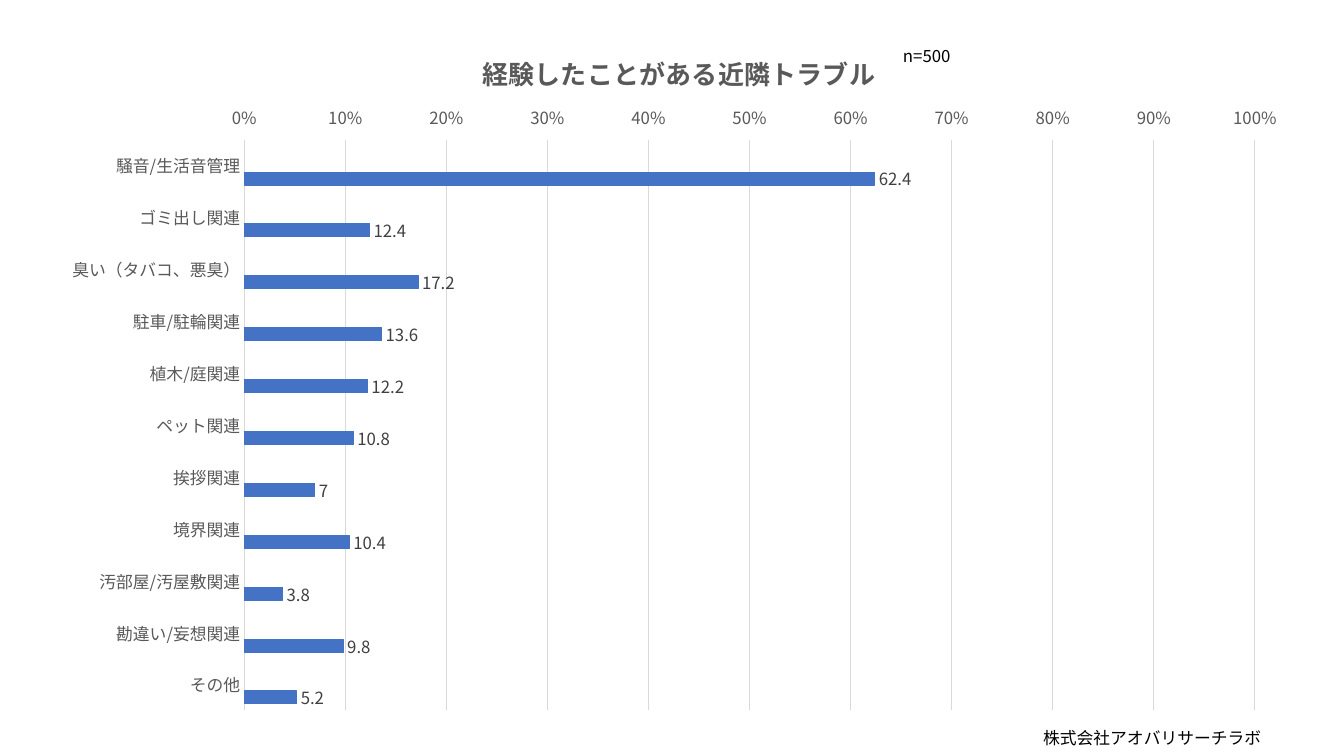
import pptx
import pptx.chart.data
import pptx.dml.color
import pptx.enum.chart
import pptx.enum.text
import pptx.oxml
import pptx.oxml.ns
import pptx.util

Pt = pptx.util.Pt
qn = pptx.oxml.ns.qn

TROUBLES = [
    ("その他", 5.2),
    ("勘違い/妄想関連", 9.8),
    ("汚部屋/汚屋敷関連", 3.8),
    ("境界関連", 10.4),
    ("挨拶関連", 7),
    ("ペット関連", 10.8),
    ("植木/庭関連", 12.2),
    ("駐車/駐輪関連", 13.6),
    ("臭い（タバコ、悪臭）", 17.2),
    ("ゴミ出し関連", 12.4),
    ("騒音/生活音管理", 62.4),
]


def rgb(value):
    return pptx.dml.color.RGBColor.from_string(value)


def manual_layout(**values):
    ns = pptx.oxml.ns.nsdecls("c")
    parts = "".join(f'<c:{k} val="{v}"/>' for k, v in values.items())
    return pptx.oxml.parse_xml(
        f"<c:layout {ns}><c:manualLayout>{parts}</c:manualLayout></c:layout>")


def drop_layout(parent):
    for layout in parent.findall(qn("c:layout")):
        parent.remove(layout)


class Deck:
    face = "Noto Sans CJK JP"
    grey = "595959"
    grid = "D9D9D9"

    def __init__(self, width, height):
        self.prs = pptx.Presentation()
        self.prs.slide_width, self.prs.slide_height = Pt(width), Pt(height)
        self.slide = self.prs.slides.add_slide(self.prs.slide_layouts[6])

    def style(self, font, size, color, bold=False):
        font.name, font.size, font.bold = self.face, Pt(size), bold
        font.color.rgb = rgb(color)

    def east_asian(self, element):
        for latin in element.iter(qn("a:latin")):
            ea = pptx.oxml.parse_xml(
                f'<a:ea {pptx.oxml.ns.nsdecls("a")} typeface="{self.face}"/>')
            latin.addnext(ea)

    def text(self, x, y, w, h, words):
        sp = self.slide.shapes.add_textbox(Pt(x), Pt(y), Pt(w), Pt(h))
        tf = sp.text_frame
        tf.word_wrap = True
        tf.auto_size = pptx.enum.text.MSO_AUTO_SIZE.SHAPE_TO_FIT_TEXT
        p = tf.paragraphs[0]
        p.text = words
        self.style(p.font, 12, "000000")
        self.east_asian(sp.element)

    def axis(self, axis):
        axis.major_tick_mark = axis.minor_tick_mark = pptx.enum.chart.XL_TICK_MARK.NONE
        self.style(axis.tick_labels.font, 12, self.grey)

    def bar_chart(self, x, y, w, h, title, rows):
        data = pptx.chart.data.CategoryChartData()
        data.categories = [name for name, _ in rows]
        data.add_series("Series 1", [value for _, value in rows])
        for name in ("Series 2", "Series 3"):
            data.add_series(name, [None] * len(rows))
        chart = self.slide.shapes.add_chart(
            pptx.enum.chart.XL_CHART_TYPE.BAR_CLUSTERED,
            Pt(x), Pt(y), Pt(w), Pt(h), data).chart
        self.style(chart.font, 10, "000000")
        chart.has_legend = False
        self.chart_title(chart, title)

        plot = chart.plots[0]
        plot.gap_width, plot.overlap = 100, 0
        plot.vary_by_categories = False
        for series, color in zip(plot.series, ("4472C4", "ED7D31", "A5A5A5")):
            series.format.fill.solid()
            series.format.fill.fore_color.rgb = rgb(color)
        bars = plot.series[0]
        bars.format.line.color.rgb = rgb("4472C4")
        bars.format.line.width = Pt(0.75)
        labels = bars.data_labels
        labels.show_value = True
        labels.position = pptx.enum.chart.XL_LABEL_POSITION.OUTSIDE_END
        self.style(labels.font, 12, "404040")

        cat, val = chart.category_axis, chart.value_axis
        self.axis(cat)
        self.axis(val)
        val.minimum_scale, val.maximum_scale, val.major_unit = 0, 100, 10
        val.tick_labels.number_format = "0\\%"
        val.tick_labels.number_format_is_linked = False
        val.tick_label_position = pptx.enum.chart.XL_TICK_LABEL_POSITION.HIGH
        val.format.line.fill.background()
        for line in (cat.format.line, val.major_gridlines.format.line):
            line.color.rgb = rgb(self.grid)
            line.width = Pt(0.75)

        area = chart.element.find(".//" + qn("c:plotArea"))
        drop_layout(area)
        area.insert(0, manual_layout(
            layoutTarget="inner", xMode="edge", yMode="edge",
            x=0.157, y=0.172, w=0.806, h=0.808))
        self.east_asian(chart.element)

    def chart_title(self, chart, words):
        chart.has_title = True
        p = chart.chart_title.text_frame.paragraphs[0]
        p.text = words
        self.style(p.font, 18.6, self.grey, bold=True)
        title = chart.element.find(".//" + qn("c:title"))
        drop_layout(title)
        title.find(qn("c:tx")).addnext(
            manual_layout(xMode="edge", yMode="edge", x=0.343, y=0.04))


def main():
    deck = Deck(960, 540)
    deck.bar_chart(33.84, 12.96, 895.68, 504.72,
                   "経験したことがある近隣トラブル", TROUBLES)
    deck.text(637.92, 28.8, 72.72, 21.6, "n=500")
    deck.text(738, 516.24, 177.84, 21.6, "株式会社アオバリサーチラボ")
    deck.prs.save("out.pptx")


if __name__ == "__main__":
    main()
